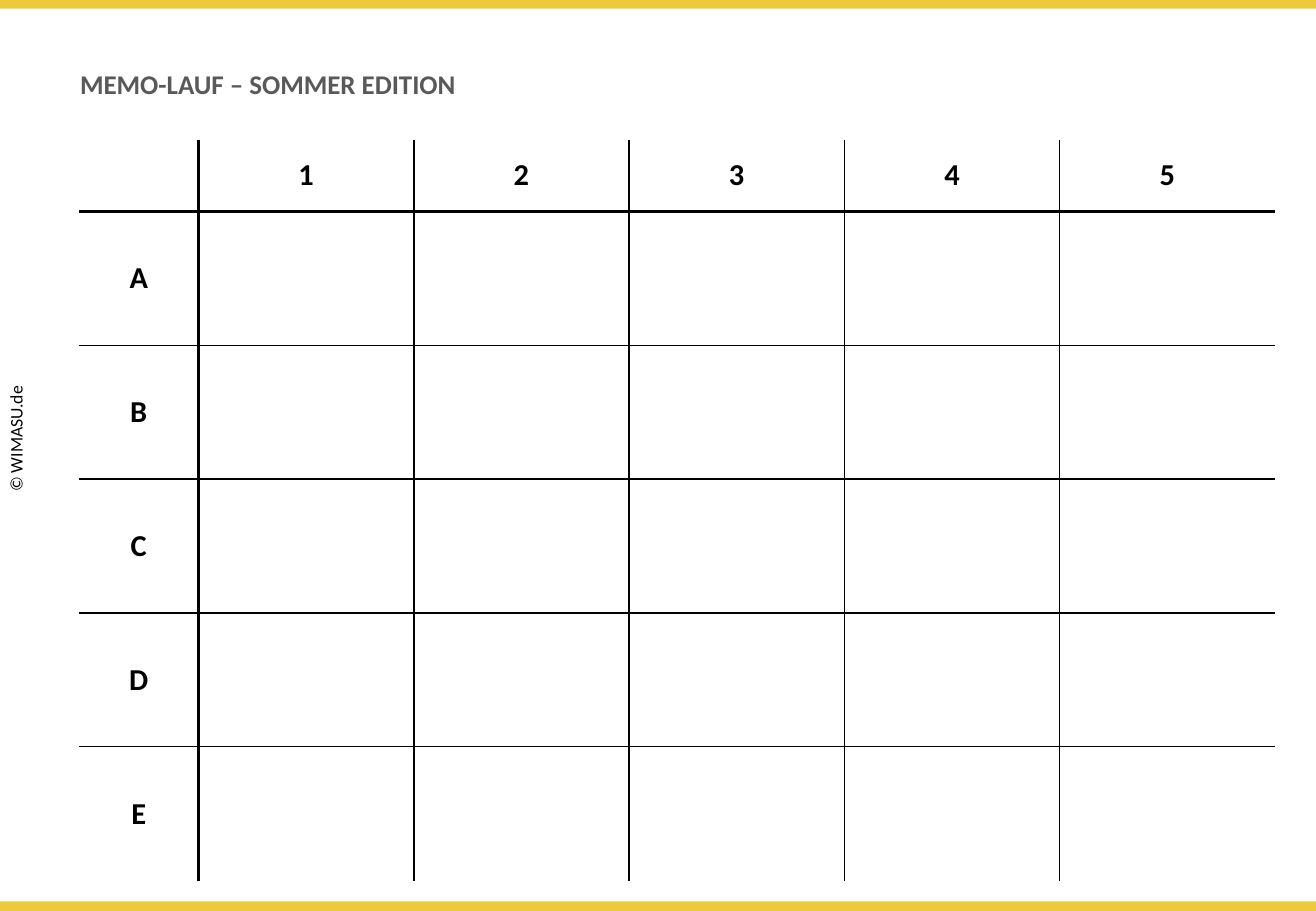
from lxml.etree import SubElement
from pptx import Presentation
from pptx.dml.color import RGBColor as Rgb
from pptx.enum.shapes import MSO_SHAPE as Shape
from pptx.enum.text import MSO_ANCHOR as Anchor, PP_ALIGN as Align
from pptx.oxml.ns import qn
from pptx.util import Cm, Pt

HUES = {"gold": "ECCA3A", "grey": "595959", "black": "000000"}
WIDE, HIGH = 27.51, 19.05
HEADS = ["", "1", "2", "3", "4", "5"]
SIDES = ["", "A", "B", "C", "D", "E"]


class Sheet:
    font = "Calibri"

    def __init__(self, deck):
        self.slide = deck.slides.add_slide(deck.slide_layouts[5])
        self.shapes = self.slide.shapes

    def style(self, para, size, hue, bold=False):
        for run in para.runs:
            run.font.name = self.font
            run.font.size = Pt(size)
            run.font.bold = bold
            run.font.color.rgb = Rgb.from_string(HUES[hue])

    def bar(self, top, tall):
        bar = self.shapes.add_shape(Shape.RECTANGLE, 0, Cm(top), Cm(WIDE), Cm(tall))
        bar.shadow.inherit = False
        bar.fill.solid()
        bar.fill.fore_color.rgb = Rgb.from_string(HUES["gold"])
        bar.line.fill.background()

    def title(self, text, left, top, wide, tall):
        box = self.shapes.title
        box.left, box.top, box.width, box.height = map(Cm, (left, top, wide, tall))
        box.text_frame.text = text
        box.text_frame.vertical_anchor = Anchor.BOTTOM
        para = box.text_frame.paragraphs[0]
        para.alignment = Align.LEFT
        para.line_spacing = 0.9
        self.style(para, 16, "grey", True)

    def label(self, text, left, top, wide, tall):
        box = self.shapes.add_textbox(*map(Cm, (left, top, wide, tall)))
        box.rotation = 270
        box.text_frame.word_wrap = False
        box.text_frame.text = text
        self.style(box.text_frame.paragraphs[0], 10.5, "black")

    def border(self, cell, sides):
        props = cell._tc.get_or_add_tcPr()
        for spot, (side, size) in enumerate(sides.items()):
            line = SubElement(props, qn("a:ln" + side), w=str(Pt(size)))
            if size:
                fill = SubElement(line, qn("a:solidFill"))
                SubElement(fill, qn("a:srgbClr"), val=HUES["black"])
            else:
                SubElement(line, qn("a:noFill"))
            props.insert(spot, line)

    def grid(self, left, top, cols, rows):
        frame = self.shapes.add_table(
            len(rows), len(cols), Cm(left), Cm(top), Cm(sum(cols)), Cm(sum(rows)))
        table = frame.table
        table.first_row = table.horz_banding = False
        for col, wide in zip(table.columns, cols):
            col.width = Cm(wide)
        for row, tall in zip(table.rows, rows):
            row.height = Cm(tall)
        ups = [0, 2.25] + [1] * (len(cols) - 2) + [0]
        flats = [0, 2] + [1] * (len(rows) - 2) + [0]
        for y, side in enumerate(SIDES):
            for x, head in enumerate(HEADS):
                cell = table.cell(y, x)
                cell.fill.background()
                self.border(cell, {"L": ups[x], "R": ups[x + 1],
                                   "T": flats[y], "B": flats[y + 1]})
                text = head if y == 0 else side if x == 0 else ""
                if text:
                    cell.text_frame.text = text
                    cell.vertical_anchor = Anchor.MIDDLE
                    para = cell.text_frame.paragraphs[0]
                    para.alignment = Align.CENTER
                    self.style(para, 18, "black", True)


def main():
    deck = Presentation()
    deck.slide_width, deck.slide_height = Cm(WIDE), Cm(HIGH)
    sheet = Sheet(deck)
    sheet.bar(0, 0.18)
    sheet.bar(18.85, 0.2)
    sheet.title("MEMO-LAUF – SOMMER EDITION", 1.42, 1.09, 23.11, 1.14)
    sheet.label("© WIMASU.de", -1.07, 8.74, 2.84, 0.74)
    sheet.grid(1.65, 2.92, [2.5] + [4.5] * 5, [1.5] + [2.8] * 5)
    deck.save("out.pptx")


if __name__ == "__main__":
    main()
